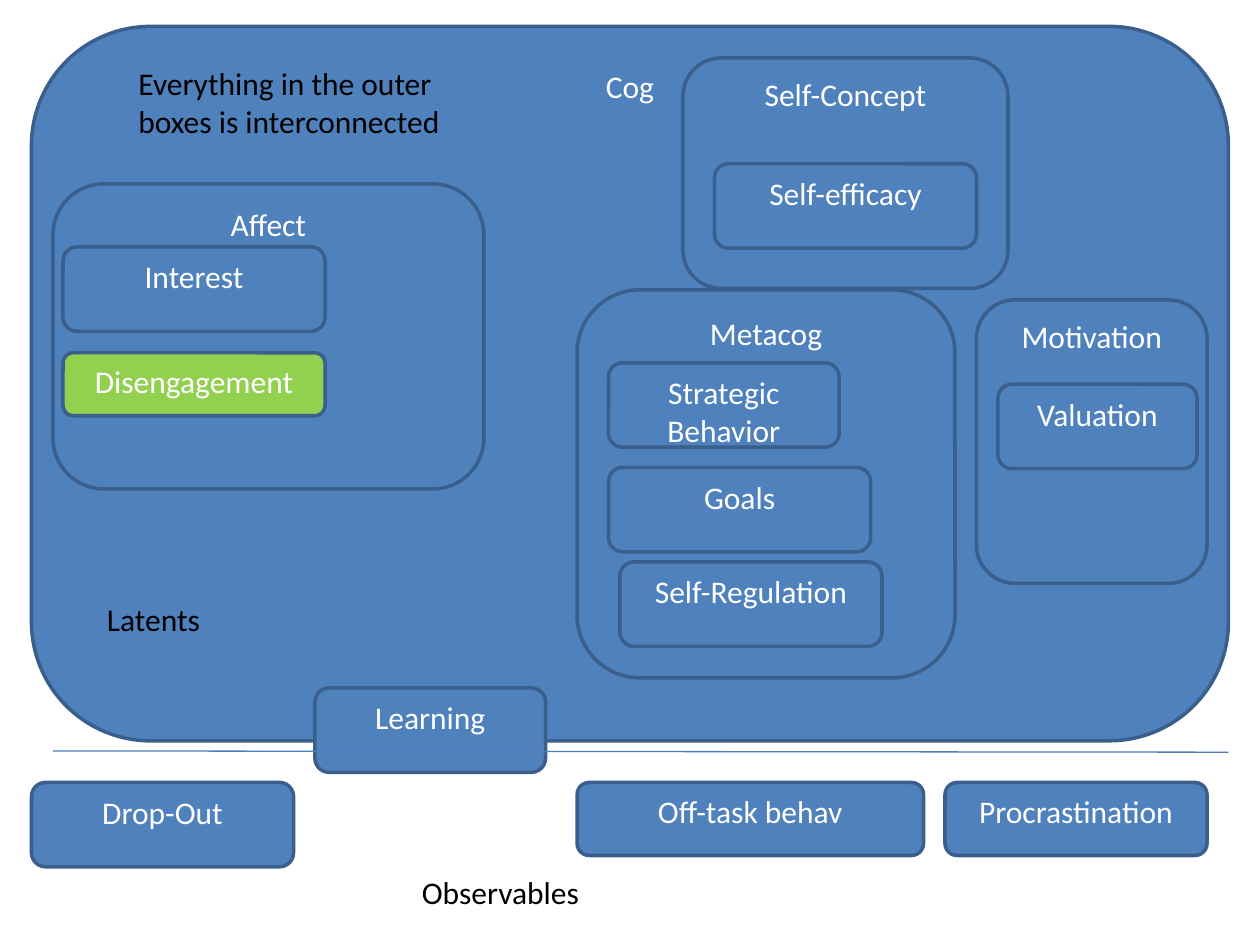
import pptx
import pptx.util
import pptx.dml.color
import pptx.enum.shapes
import pptx.enum.text
import pptx.oxml
from pptx.util import Inches

FONT = "Calibri"
BLUE, GREEN, OUTLINE, RULE = "4F81BD", "92D050", "3A5F8C", "4B7EBC"
WHITE, BLACK = "FFFFFF", "000000"

# Text, left, top, width, height (inches), from back to front
CONSTRUCTS = [
    ("Cog", 0.25, 0.21, 9.5, 5.67),
    ("Affect", 0.42, 1.46, 3.42, 2.42),
    ("Motivation", 7.75, 2.38, 1.83, 2.25),
    ("Metacog", 4.58, 2.3, 3, 3.08),
    ("Learning", 2.5, 5.46, 1.83, 0.67),
    ("Strategic Behavior", 4.83, 2.88, 1.83, 0.67),
    ("Self-Regulation", 4.92, 4.46, 2.08, 0.67),
    ("Goals", 4.83, 3.71, 2.08, 0.67),
    ("Valuation", 7.92, 3.05, 1.58, 0.67),
    ("Interest", 0.5, 1.96, 2.08, 0.67),
    ("Self-Concept", 5.42, 0.46, 2.58, 1.83),
    ("Procrastination", 7.5, 6.21, 2.08, 0.58),
    ("Drop-Out", 0.25, 6.21, 2.08, 0.67),
    ("Off-task behav", 4.58, 6.21, 2.75, 0.58),
    ("Disengagement", 0.5, 2.8, 2.08, 0.5),
]
DIVIDER = (0.42, 5.96, 9.75, 5.97)
INNERMOST = ("Self-efficacy", 5.67, 1.3, 2.08, 0.67)
CAPTIONS = [
    ("Everything in the outer boxes is interconnected", 1, 0.46, 3.08, 0.71),
    ("Latents", 0.75, 4.71, 3.08, 0.4),
    ("Observables", 3.25, 6.88, 3.08, 0.4),
]
HIGHLIGHTED = {"Disengagement"}


def rgb(value):
    return pptx.dml.color.RGBColor.from_string(value)


def write(box, text, color=BLACK, align=pptx.enum.text.PP_ALIGN.LEFT):
    frame = box.text_frame
    frame.word_wrap = True
    frame.vertical_anchor = pptx.enum.text.MSO_ANCHOR.TOP
    para = frame.paragraphs[0]
    para.alignment = align
    span = para.add_run()
    span.text = text
    span.font.name = FONT
    span.font.size = pptx.util.Pt(18)
    span.font.color.rgb = rgb(color)


def add_construct(page, text, *place):
    box = page.shapes.add_shape(
        pptx.enum.shapes.MSO_SHAPE.ROUNDED_RECTANGLE, *map(Inches, place))
    box.shadow.inherit = False
    box.fill.solid()
    box.fill.fore_color.rgb = rgb(GREEN if text in HIGHLIGHTED else BLUE)
    box.line.color.rgb = rgb(OUTLINE)
    box.line.width = pptx.util.Pt(2)
    write(box, text, color=WHITE, align=pptx.enum.text.PP_ALIGN.CENTER)


def add_divider(page, *ends):
    line = page.shapes.add_connector(
        pptx.enum.shapes.MSO_CONNECTOR.STRAIGHT, *map(Inches, ends))
    line.line.color.rgb = rgb(RULE)
    line.line.width = pptx.util.Pt(0.75)
    properties = line._element.spPr
    properties.append(pptx.oxml.parse_xml(
        '<a:effectLst xmlns:a="http://schemas.openxmlformats.org/drawingml/2006/main"/>'))


def add_caption(page, text, *place):
    box = page.shapes.add_textbox(*map(Inches, place))
    write(box, text)
    box.text_frame.auto_size = pptx.enum.text.MSO_AUTO_SIZE.SHAPE_TO_FIT_TEXT


def main():
    deck = pptx.Presentation()
    deck.slide_width, deck.slide_height = Inches(10), Inches(7.5)
    page = deck.slides.add_slide(deck.slide_layouts[6])
    for construct in CONSTRUCTS:
        add_construct(page, *construct)
    add_divider(page, *DIVIDER)
    add_construct(page, *INNERMOST)
    for caption in CAPTIONS:
        add_caption(page, *caption)
    deck.save("out.pptx")


if __name__ == "__main__":
    main()
